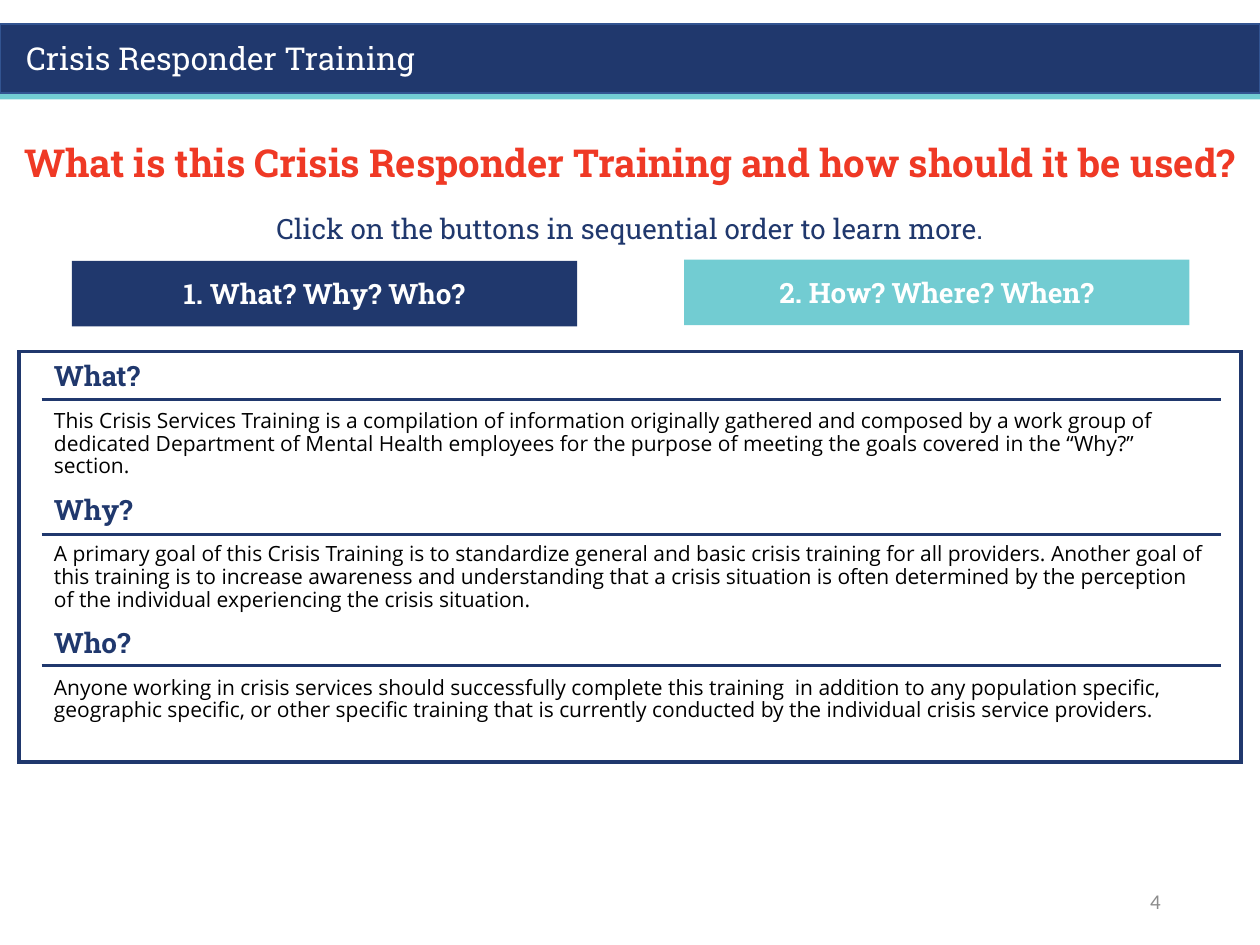
from lxml import etree
from pptx import Presentation
from pptx.dml.color import RGBColor
from pptx.enum.shapes import MSO_CONNECTOR, MSO_SHAPE
from pptx.enum.text import MSO_ANCHOR, PP_ALIGN
from pptx.oxml.ns import qn
from pptx.util import Inches, Pt

NAVY = RGBColor(0x20, 0x38, 0x6D)
NAVY_EDGE = RGBColor(0x32, 0x54, 0x91)
TEAL = RGBColor(0x72, 0xCC, 0xD2)
RED = RGBColor(0xEF, 0x39, 0x25)
GRAY = RGBColor(0x8C, 0x8C, 0x8C)
WHITE = RGBColor(0xFF, 0xFF, 0xFF)
BLACK = RGBColor(0, 0, 0)
SLAB, SANS, NUMBER_FONT = "Roboto Slab", "Open Sans", "Calibri"
LEFT, CENTER, RIGHT = PP_ALIGN.LEFT, PP_ALIGN.CENTER, PP_ALIGN.RIGHT
TOP, MIDDLE = MSO_ANCHOR.TOP, MSO_ANCHOR.MIDDLE

# Content
HEADER = "Crisis Responder Training"
TITLE = "What is this Crisis Responder Training and how should it be used?"
SUBTITLE = "Click on the buttons in sequential order to learn more."
PAGE_NUMBER = "4"
BUTTONS = [  # text, fill, left, top
    ("1. What? Why? Who?", NAVY, 0.57, 2.07),
    ("2. How? Where? When?", TEAL, 5.43, 2.06),
]
SECTIONS = [  # heading, text, height of the rule below the heading
    ("What?",
     "This Crisis Services Training is a compilation of information originally "
     "gathered and composed by a work group of dedicated Department of Mental "
     "Health employees for the purpose of meeting the goals covered in the "
     "“Why?” section.", 3.17),
    ("Why?",
     "A primary goal of this Crisis Training is to standardize general and basic "
     "crisis training for all providers. Another goal of this training is to "
     "increase awareness and understanding that a crisis situation is often "
     "determined by the perception of the individual experiencing the crisis "
     "situation.", 4.24),
    ("Who?",
     "Anyone working in crisis services should successfully complete this "
     "training  in addition to any population specific, geographic specific, or "
     "other specific training that is currently conducted by the individual "
     "crisis service providers.", 5.28),
]

# Layout in inches
WIDTH, HEIGHT = 10, 7.5
BUTTON_SIZE = (4.01, 0.52)
BODY_LEFT, BODY_WIDTH = 0.33, 9.36
TIGHT = 0.9  # line spacing of title and body

presentation = Presentation()
presentation.slide_width = Inches(WIDTH)
presentation.slide_height = Inches(HEIGHT)
slide = presentation.slides.add_slide(presentation.slide_layouts[6])


def add_box(left, top, width, height, fill=None, line=None, line_width=1):
    shape = slide.shapes.add_shape(
        MSO_SHAPE.RECTANGLE, *map(Inches, (left, top, width, height)))
    shape.shadow.inherit = False
    if fill is None:
        shape.fill.background()
    else:
        shape.fill.solid()
        shape.fill.fore_color.rgb = fill
    if line is None:
        shape.line.fill.background()
    else:
        shape.line.color.rgb = line
        shape.line.width = Pt(line_width)
        etree.SubElement(shape.line._get_or_add_ln(), qn("a:miter"), lim="800000")
    return shape


def add_text_box(left, top, width, height, anchor=TOP):
    box = slide.shapes.add_textbox(*map(Inches, (left, top, width, height)))
    box.text_frame.word_wrap = True
    box.text_frame.vertical_anchor = anchor
    return box


def add_text(shape, text, size=16, font=SLAB, color=NAVY, bold=False,
             align=LEFT, spacing=1.0, before=0):
    """Fill the first paragraph of a shape, or append another one."""
    frame = shape.text_frame
    paragraph = frame.paragraphs[0] if not frame.text else frame.add_paragraph()
    paragraph.alignment = align
    paragraph.line_spacing = spacing
    paragraph.space_before = Pt(before)
    run = paragraph.add_run()
    run.text = text
    run.font.size, run.font.name, run.font.bold = Pt(size), font, bold
    run.font.color.rgb = color


def add_rule(left, right, top):
    rule = slide.shapes.add_connector(
        MSO_CONNECTOR.STRAIGHT, *map(Inches, (left, top, right, top)))
    rule.line.color.rgb = NAVY
    rule.line.width = Pt(1.5)
    etree.SubElement(rule._element.spPr, qn("a:effectLst"))


# Header band
add_box(0, 0.48, WIDTH, 0.31, fill=TEAL)
add_box(0, 0.19, WIDTH, 0.55, fill=NAVY, line=NAVY_EDGE)
add_text(add_text_box(0.11, 0.26, 3.7, 0.4), HEADER, size=18, color=WHITE)

# Title and instruction
title = add_text_box(0, 1.02, WIDTH, 1.05, anchor=MIDDLE)
add_text(title, TITLE, size=22, color=RED, bold=True, align=CENTER, spacing=TIGHT)
add_text(title, SUBTITLE, align=CENTER, spacing=TIGHT, before=17)

# Buttons
for label, fill, left, top in BUTTONS:
    button = add_box(left, top, *BUTTON_SIZE, fill=fill)
    button.text_frame.vertical_anchor = MIDDLE
    add_text(button, label, color=WHITE, bold=True, align=CENTER)

# Framed sections
add_box(0.15, 2.79, 9.7, 3.26, line=NAVY, line_width=2.25)
body = add_text_box(BODY_LEFT, 2.83, BODY_WIDTH, 3.22)
for index, (heading, text, rule_top) in enumerate(SECTIONS):
    add_text(body, heading, bold=True, spacing=TIGHT, before=10 if index else 0)
    add_text(body, text, size=12, font=SANS, color=BLACK, spacing=TIGHT, before=10)
    add_rule(BODY_LEFT, BODY_LEFT + BODY_WIDTH, rule_top)

# Page number
number = add_text_box(7.06, 6.95, 2.25, 0.4, anchor=MIDDLE)
add_text(number, PAGE_NUMBER, size=12, font=NUMBER_FONT, color=GRAY, align=RIGHT)

presentation.save("out.pptx")
